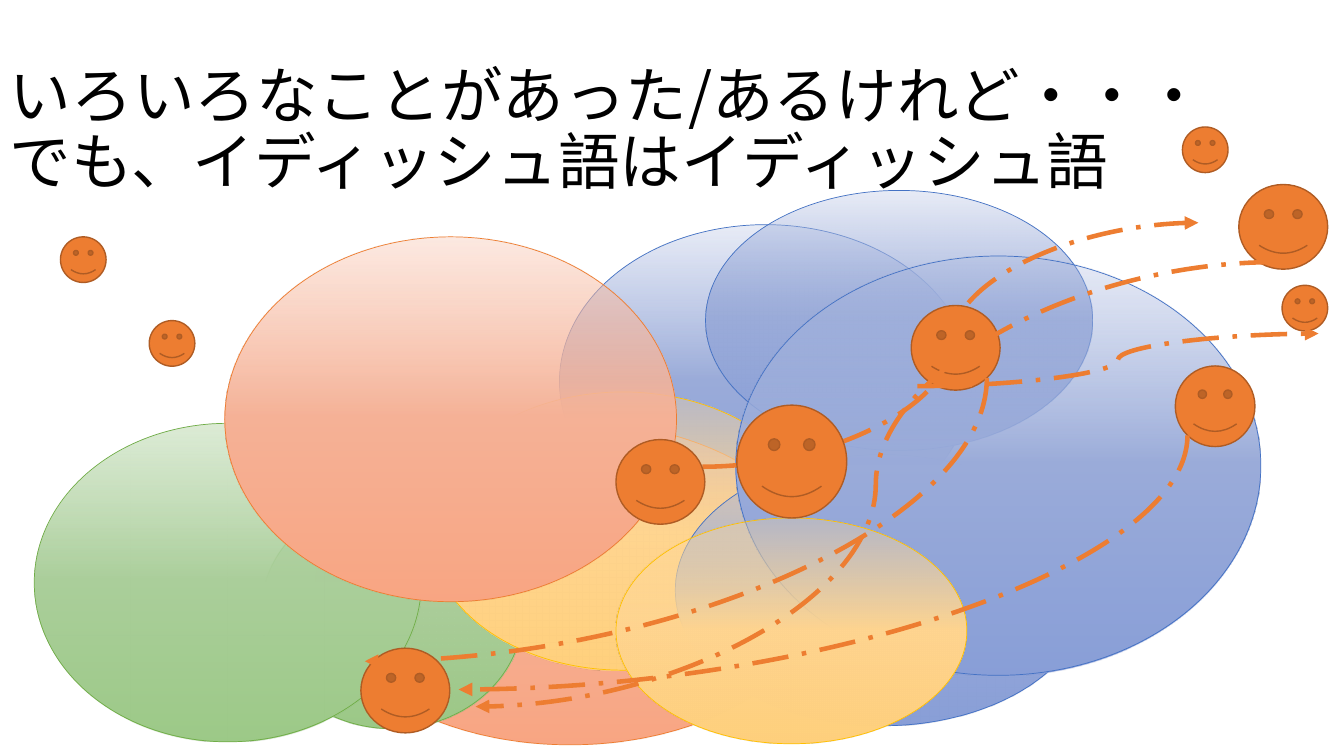
from lxml import etree
from pptx import Presentation
from pptx.dml.color import RGBColor
from pptx.enum.dml import MSO_LINE
from pptx.enum.shapes import MSO_CONNECTOR as Link, MSO_SHAPE as Shape
from pptx.enum.text import MSO_ANCHOR as Anchor, PP_ALIGN as Align
from pptx.oxml import parse_xml
from pptx.oxml.ns import nsdecls, qn
from pptx.util import Pt

TITLE = ["いろいろなことがあった/あるけれど・・・", "でも、イディッシュ語はイディッシュ語"]
FONT = "Noto Sans CJK JP"
ORANGE = "ED7D31"

# colour: (outline, opacity of the top in percent, gradient from top to bottom)
TINTS = {
    "blue": ("4472C4", 26, ("A8B7DF", "9AABD9", "889ED7")),
    "orange": (ORANGE, 32, ("F7BDA5", "F5B196", "F8A582")),
    "green": ("70AD47", 46, ("B5D5A7", "AACE9A", "9CC987")),
    "yellow": ("FFC000", 30, ("FFDB9E", "FFD590", "FFD07C")),
}
# colour, left, top, width, height
REGIONS_BEHIND_TITLE = [
    ("blue", 399.6, 160.5, 294.5, 224),
    ("orange", 225.4, 301, 363.6, 231),
    ("green", 186.5, 354.2, 187.2, 166.3),
]
REGIONS = [
    ("green", 24.5, 302.4, 276.5, 227.5),
    ("yellow", 306.7, 280, 276.5, 198.7),
    ("orange", 160.6, 169.2, 322.6, 260.6),
    ("blue", 504, 136, 276.5, 185.8),
    ("blue", 482.4, 324.7, 296, 193.7),
    ("blue", 525.6, 182.9, 375, 299.5),
    ("yellow", 440, 370, 250.6, 161.3),
]
LARGE, MEDIUM, SMALL = (63.5, 60.5), (56.9, 57.6), (32.6, 32.6)
# left, top, size
SPEAKERS = [
    (440, 314, LARGE),
    (884.9, 131.8, LARGE),
    (526.3, 289.4, (78.5, 80.6)),
    (650.9, 218.2, LARGE),
    (839.5, 261.4, MEDIUM),
    (915.8, 203.8, SMALL),
    (257.8, 463, LARGE),
    (844.6, 90.7, SMALL),
    (43.2, 169.2, SMALL),
    (106.6, 229, SMALL),
]
# start, end, whether the curve is a single quarter turn
FIRST_MOVE = ((501.8, 333.4), (856, 159.1), False)
LATER_MOVES = [
    ((655.2, 275.8), (941.8, 238.3), False),
    ((848.2, 311), (327.6, 492.5), True),
    ((704.9, 270), (260.6, 472.3), True),
    ((911.5, 187.2), (339.8, 504.7), False),
]


def rgb(code):
    return RGBColor.from_string(code)


def add_outlined(kind, left, top, width, height, outline, weight):
    shape = page.shapes.add_shape(kind, Pt(left), Pt(top), Pt(width), Pt(height))
    shape.shadow.inherit = False
    shape.line.color.rgb = rgb(outline)
    shape.line.width = Pt(weight)
    return shape


def add_region(tint, *frame):
    outline, opacity, colours = TINTS[tint]
    region = add_outlined(Shape.OVAL, *frame, outline, 0.5)
    stops = ""
    for index, (colour, alpha) in enumerate(zip(colours, (opacity, 100, 100))):
        stops += (f'<a:gs pos="{index * 50000}"><a:srgbClr val="{colour}">'
                  f'<a:alpha val="{alpha * 1000}"/></a:srgbClr></a:gs>')
    gradient = parse_xml(f'<a:gradFill {nsdecls("a")} rotWithShape="1"><a:gsLst>{stops}</a:gsLst>'
                         '<a:lin ang="5400000" scaled="0"/></a:gradFill>')
    region._element.spPr.find(qn("a:prstGeom")).addnext(gradient)


def add_speaker(left, top, size):
    face = add_outlined(Shape.SMILEY_FACE, left, top, *size, "AF5C24", 1)
    face.fill.solid()
    face.fill.fore_color.rgb = rgb(ORANGE)


def add_move(start, end, quarter_turn):
    """Dashed arrow; a quarter turn leaves downwards and arrives leftwards."""
    arrow = page.shapes.add_connector(Link.CURVE, *map(Pt, start + end))
    arrow.line.color.rgb = rgb(ORANGE)
    arrow.line.width = Pt(3.25)
    arrow.line.dash_style = MSO_LINE.LONG_DASH_DOT
    etree.SubElement(arrow.line._get_or_add_ln(), qn("a:tailEnd"), type="triangle")
    properties = arrow._element.spPr
    etree.SubElement(properties, qn("a:effectLst"))
    if quarter_turn:
        across, down = start[0] - end[0], end[1] - start[1]
        arrow.left = Pt((start[0] + end[0] - down) / 2)
        arrow.top = Pt((start[1] + end[1] - across) / 2)
        arrow.width, arrow.height = Pt(down), Pt(across)
        frame = properties.find(qn("a:xfrm"))
        frame.attrib.pop("flipH", None)
        frame.set("rot", "5400000")
        properties.find(qn("a:prstGeom")).set("prst", "curvedConnector2")


def add_text(lines, left, top, width, height, *, size, font, colour, spacing):
    box = page.shapes.add_textbox(Pt(left), Pt(top), Pt(width), Pt(height))
    frame = box.text_frame
    frame.word_wrap = True
    frame.vertical_anchor = Anchor.MIDDLE
    para = frame.paragraphs[0]
    para.alignment = Align.LEFT
    para.line_spacing = spacing
    for index, line in enumerate(lines):
        if index:
            para.add_line_break()
        span = para.add_run()
        span.text = line
        span.font.size = Pt(size)
        span.font.color.rgb = rgb(colour)
        span.font.name = font
        etree.SubElement(span.font._element, qn("a:ea"), typeface=font)


deck = Presentation()
deck.slide_width, deck.slide_height = Pt(960), Pt(540)
page = deck.slides.add_slide(deck.slide_layouts[6])

for region in REGIONS_BEHIND_TITLE:
    add_region(*region)
add_text(TITLE, 0, 28.8, 911.5, 130.3, size=44, font=FONT, colour="000000", spacing=0.9)
for region in REGIONS:
    add_region(*region)
add_move(*FIRST_MOVE)
for speaker in SPEAKERS:
    add_speaker(*speaker)
for move in LATER_MOVES:
    add_move(*move)

deck.save("out.pptx")
